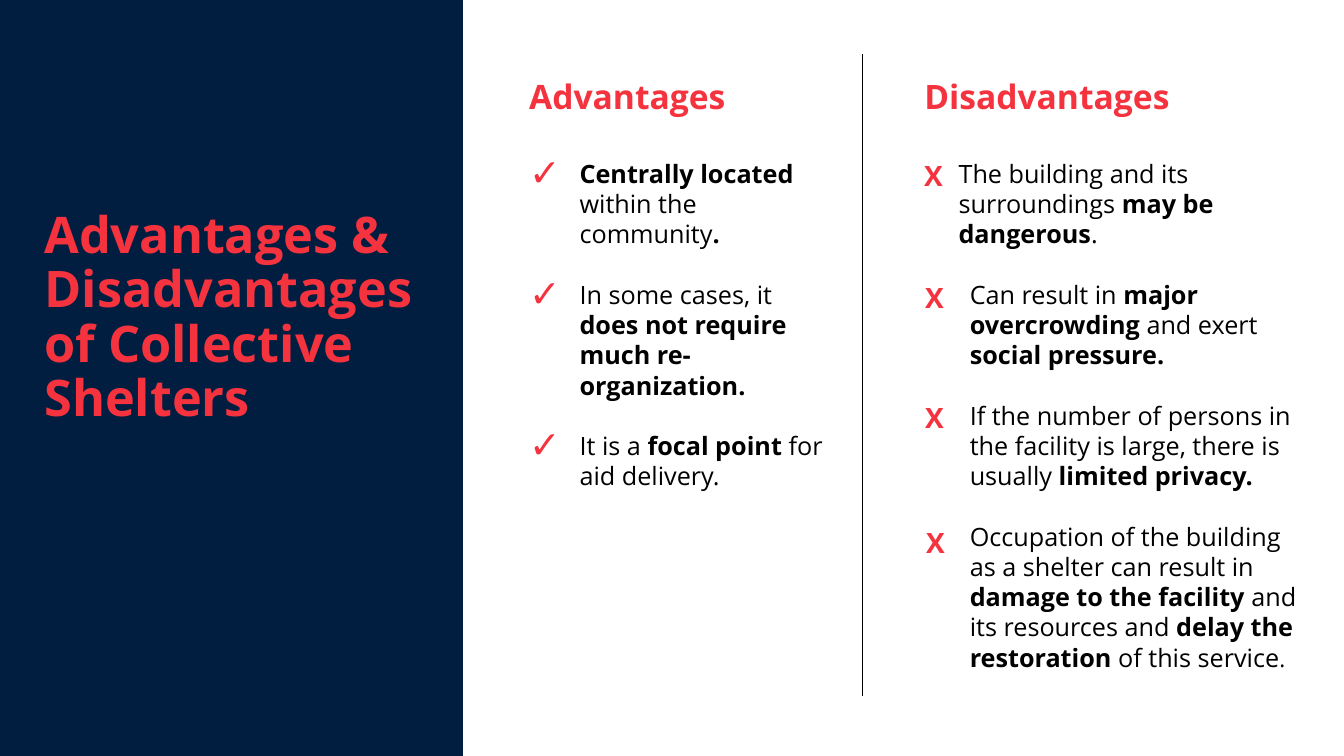
from dataclasses import dataclass
from lxml.etree import SubElement as Sub
from pptx import Presentation
from pptx.dml.color import RGBColor as RGB
from pptx.enum.shapes import MSO_CONNECTOR as Link, MSO_SHAPE as Kind
from pptx.enum.text import MSO_ANCHOR as Anchor, MSO_AUTO_SIZE as Fit, PP_ALIGN as Align
from pptx.oxml.ns import qn
from pptx.util import Pt


@dataclass(frozen=True)
class Theme:
    navy: RGB = RGB(0x01, 0x1E, 0x41)
    red: RGB = RGB(0xF5, 0x33, 0x3F)
    black: RGB = RGB(0, 0, 0)
    face: str = "Open Sans"
    title: int = 36
    head: int = 24
    mark: int = 20
    body: int = 18
    dot: int = 16
    gap: float = 21.6


class Page:
    def __init__(self, slide, theme):
        self.slide = slide
        self.theme = theme

    def place(self, shape, box):
        shape.left, shape.top, shape.width, shape.height = map(Pt, box)

    def frame(self, shape, box, anchor=Anchor.TOP, fit=Fit.SHAPE_TO_FIT_TEXT):
        self.place(shape, box)
        text = shape.text_frame
        text.word_wrap = True
        text.auto_size = fit
        text.vertical_anchor = anchor
        text.margin_left = text.margin_right = Pt(7.2)
        text.margin_top = text.margin_bottom = Pt(3.6)
        return text

    def style(self, para, size, color, bold=False):
        para.alignment = Align.LEFT
        para.space_before = Pt(0)
        font = para.font
        font.name = self.theme.face
        font.size = Pt(size)
        font.bold = bold
        font.color.rgb = color

    def panel(self, box):
        shape = self.slide.shapes.add_shape(Kind.RECTANGLE, *map(Pt, box))
        shape.shadow.inherit = False
        shape.fill.solid()
        shape.fill.fore_color.rgb = self.theme.navy
        shape.line.fill.background()
        shape.element.getparent().insert(2, shape.element)

    def title(self, lines, box):
        text = self.frame(self.slide.shapes.title, box, Anchor.MIDDLE, Fit.NONE)
        text.text = "\n".join(lines)
        for para in text.paragraphs:
            self.style(para, self.theme.title, self.theme.red, True)
            para.line_spacing = 0.9

    def head(self, slot, label, box):
        text = self.frame(self.slide.placeholders[slot], box)
        text.text = label
        self.style(text.paragraphs[0], self.theme.head, self.theme.red, True)

    def mark(self, box):
        text = self.frame(self.slide.shapes.add_textbox(0, 0, 0, 0), box)
        text.text = "X"
        self.style(text.paragraphs[0], self.theme.mark, self.theme.red, True)

    def bullet(self, para, char, left, hang):
        props = para._p.get_or_add_pPr()
        props.set("marL", str(Pt(left)))
        props.set("indent", str(Pt(-hang)))
        if not char:
            Sub(props, qn("a:buNone"))
            return
        tint = Sub(props, qn("a:buClr"))
        Sub(tint, qn("a:srgbClr"), val=str(self.theme.red))
        Sub(props, qn("a:buSzPct"), val="150000")
        Sub(props, qn("a:buChar"), char=char)

    def list(self, slot, items, box, left, hang=0, char=None):
        text = self.frame(self.slide.placeholders[slot], box)
        for num, item in enumerate(items):
            para = text.add_paragraph() if num else text.paragraphs[0]
            self.bullet(para, char, left[num], hang)
            self.style(para, self.theme.body, self.theme.black)
            para.space_before = Pt(self.theme.gap if num else 0)
            for odd, part in enumerate(item.split("*")):
                if part:
                    run = para.add_run()
                    run.text = part
                    if odd % 2:
                        run.font.bold = True
        return text

    def rule(self, x, top, end):
        line = self.slide.shapes.add_connector(Link.STRAIGHT, Pt(x), Pt(top), Pt(x), Pt(end))
        line.line.color.rgb = self.theme.black
        line.line.width = Pt(0.75)
        Sub(line.element.spPr, qn("a:effectLst"))


PROS = [
    "*Centrally located *within the community*.*",
    "In some cases, it *does not require much re-organization.*",
    "It is a *focal point *for aid delivery.",
]
CONS = [
    "The building and its surroundings *may be dangerous*.",
    "Can result in *major overcrowding* and exert *social pressure.*",
    "If the number of persons in the facility is large, there is usually *limited privacy.*",
    "Occupation of the building as a shelter can result in *damage to the facility*"
    " and its resources and *delay the restoration *of this service",
]
MARKS = [(653, 109.4), (653.8, 196.6), (653.8, 282.2), (654.5, 371.5)]


def main():
    deck = Presentation()
    deck.slide_width, deck.slide_height = Pt(960), Pt(540)
    theme = Theme()
    page = Page(deck.slides.add_slide(deck.slide_layouts[4]), theme)

    page.panel((-1.4, -0.7, 332, 540.7))
    page.title(["Advantages & Disadvantages of Collective", "Shelters"], (24.5, 50.4, 283, 354.2))
    page.head(1, "Advantages", (370.8, 50.4, 162.7, 36))
    page.head(3, "Disadvantages", (653, 50.4, 201.6, 36))
    page.list(2, PROS, (370.8, 109.4, 229.7, 247), [36] * 3, 36, "✓")
    cons = page.list(4, CONS, (677.5, 109.4, 257.8, 378), [0, 8, 8, 8])
    stop = cons.paragraphs[-1].add_run()
    stop.text = "."
    stop.font.size = Pt(theme.dot)
    for left, top in MARKS:
        page.mark((left, top, 43.2, 31.7))
    page.rule(616.3, 38.9, 496.8)
    deck.save("out.pptx")


if __name__ == "__main__":
    main()
